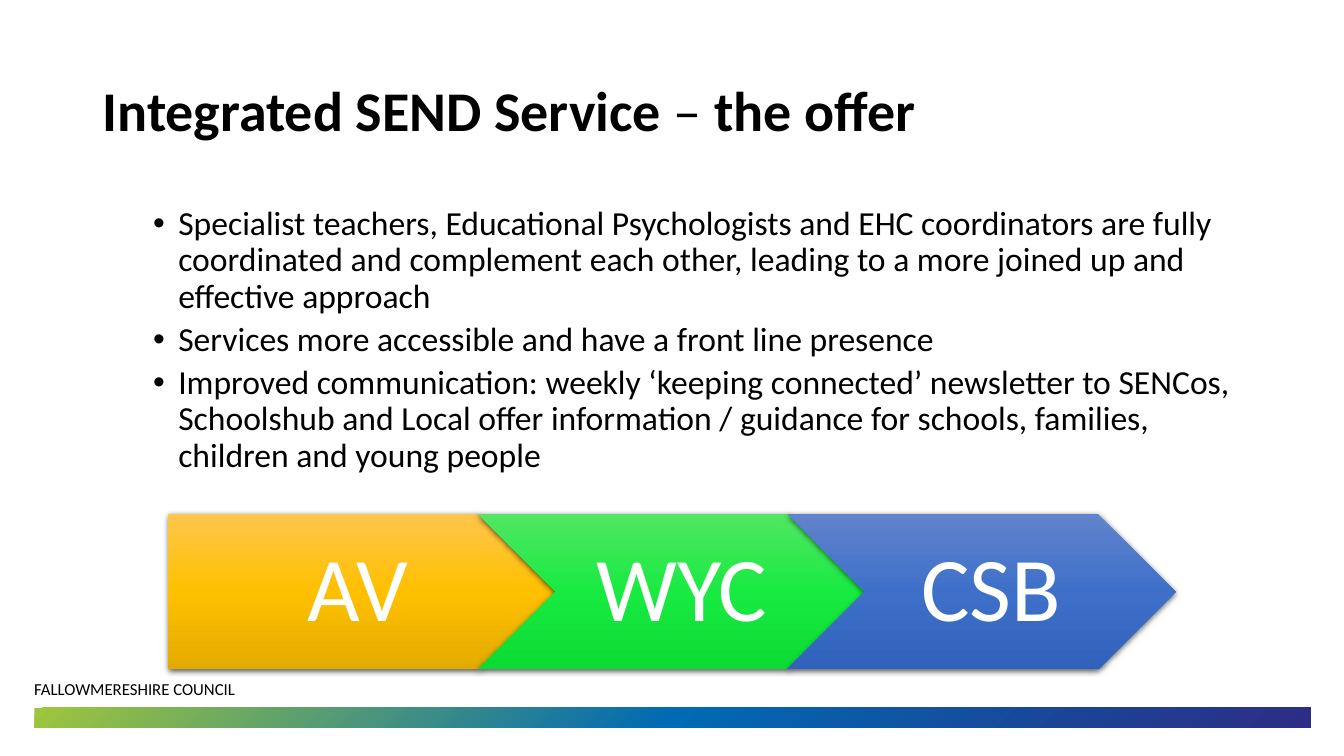
from lxml import etree
from pptx import Presentation, util as u
from pptx.dml.color import RGBColor
from pptx.enum import shapes, text
from pptx.oxml.ns import qn

WIDTH, HEIGHT = 13.33, 7.5
FONT = "Calibri"
COLOURS = {"ink": "000000", "label": "FFFFFF"}
BAR_STOPS = ["2C2D84", "006AB4", "9FC63B"]
AREAS = [
    ("AV", ["FFC64B", "FFC000", "E3AB00"]),
    ("WYC", ["51E663", "19EA42", "0CDB34"]),
    ("CSB", ["6183CB", "3E70CA", "3062BB"]),
]
TITLE = [("Integrated SEND Service ", True), ("– ", False), ("the offer", True)]
OFFERS = [
    "Specialist teachers, Educational Psychologists and EHC coordinators are fully "
    "coordinated and complement each other, leading to a more joined up and effective approach",
    "Services more accessible and have a front line presence",
    "Improved communication: weekly ‘keeping connected’ newsletter to SENCos, "
    "Schoolshub and Local offer information / guidance for schools, families, "
    "children and young people",
]


def add_element(parent, tag, **attributes):
    element = etree.SubElement(parent, qn(tag))
    for name, value in attributes.items():
        element.set(name, str(value))
    return element


def add_run(paragraph, wording, size, colour, bold=False):
    run = paragraph.add_run()
    run.text = wording
    run.font.name = FONT
    run.font.size = u.Pt(size)
    run.font.bold = bold
    run.font.color.rgb = RGBColor.from_string(COLOURS[colour])


def add_text_frame(slide, box, anchor=text.MSO_ANCHOR.TOP):
    frame = slide.shapes.add_textbox(*map(u.Inches, box)).text_frame
    frame.word_wrap = True
    frame.vertical_anchor = anchor
    return frame


def add_gradient_shape(slide, kind, box, stops):
    shape = slide.shapes.add_shape(kind, *map(u.Inches, box))
    shape.shadow.inherit = False
    shape.line.fill.background()
    shape.fill.gradient()
    gradient = shape._element.spPr.find(qn("a:gradFill"))
    for child in list(gradient):
        gradient.remove(child)
    stop_list = add_element(gradient, "a:gsLst")
    for index, colour in enumerate(stops):
        stop = add_element(stop_list, "a:gs", pos=index * 50000)
        add_element(stop, "a:srgbClr", val=colour)
    return shape, gradient


def add_title(slide, box):
    paragraph = add_text_frame(slide, box, text.MSO_ANCHOR.MIDDLE).paragraphs[0]
    paragraph.line_spacing = 0.9
    for wording, bold in TITLE:
        add_run(paragraph, wording, 40, "ink", bold)


def add_offers(slide, box):
    frame = add_text_frame(slide, box)
    for index, offer in enumerate(OFFERS):
        paragraph = frame.add_paragraph() if index else frame.paragraphs[0]
        paragraph.line_spacing = 0.9
        paragraph.space_before = u.Pt(5)
        properties = paragraph._p.get_or_add_pPr()
        properties.set("marL", str(u.Inches(0.75)))
        properties.set("indent", str(u.Inches(-0.25)))
        add_element(properties, "a:buFont", typeface="Arial")
        add_element(properties, "a:buChar", char="•")
        add_run(paragraph, offer, 24, "ink")


def add_areas(slide, box):
    left, top, width, height = box
    arrow_width = height * 2.5
    step = (width - arrow_width) / (len(AREAS) - 1)
    for index, (name, stops) in enumerate(AREAS):
        kind = shapes.MSO_SHAPE.CHEVRON if index else shapes.MSO_SHAPE.PENTAGON
        place = (left + index * step, top, arrow_width, height)
        shape, gradient = add_gradient_shape(slide, kind, place, stops)
        add_element(gradient, "a:lin", ang=5400000, scaled=0)
        effects = shape._element.spPr.find(qn("a:effectLst"))
        shadow = add_element(effects, "a:outerShdw", blurRad=u.Pt(4.5), dist=u.Pt(1.5),
                             dir=5400000, algn="ctr", rotWithShape=0)
        shade = add_element(shadow, "a:srgbClr", val=COLOURS["ink"])
        add_element(shade, "a:alpha", val=63000)
        frame = shape.text_frame
        frame.word_wrap = True
        frame.vertical_anchor = text.MSO_ANCHOR.MIDDLE
        frame.margin_left = u.Inches(0.28 if index else 0.38)
        frame.margin_right = u.Inches(0.09)
        frame.margin_top = frame.margin_bottom = u.Inches(0.19)
        paragraph = frame.paragraphs[0]
        paragraph.alignment = text.PP_ALIGN.CENTER
        paragraph.line_spacing = 0.9
        add_run(paragraph, name, 65, "label")


def add_footer(slide, box):
    left, top, width, height = box
    bar_box = (left + 0.1, top + height - 0.2, width - 0.1, 0.2)
    bar, gradient = add_gradient_shape(slide, shapes.MSO_SHAPE.RECTANGLE, bar_box, BAR_STOPS)
    bar._element.spPr.find(qn("a:xfrm")).set("flipH", "1")
    centre = add_element(gradient, "a:path", path="circle")
    add_element(centre, "a:fillToRect", l=100000, t=100000)
    add_element(gradient, "a:tileRect", r=-100000, b=-100000)
    frame = add_text_frame(slide, (left, top, width / 2, 0.3))
    add_run(frame.paragraphs[0], "FALLOWMERESHIRE COUNCIL", 12, "ink")


def main():
    presentation = Presentation()
    presentation.slide_width = u.Inches(WIDTH)
    presentation.slide_height = u.Inches(HEIGHT)
    slide = presentation.slides.add_slide(presentation.slide_layouts[6])
    margin = 0.92
    content_width = WIDTH - 2 * margin
    add_footer(slide, (0.24, 6.68, 12.76, 0.54))
    add_title(slide, (margin, 0.4, content_width, 1.45))
    add_offers(slide, (margin, 2, content_width, 2.9))
    add_areas(slide, (1.67, 5.1, 9.99, 1.54))
    presentation.save("out.pptx")


if __name__ == "__main__":
    main()
